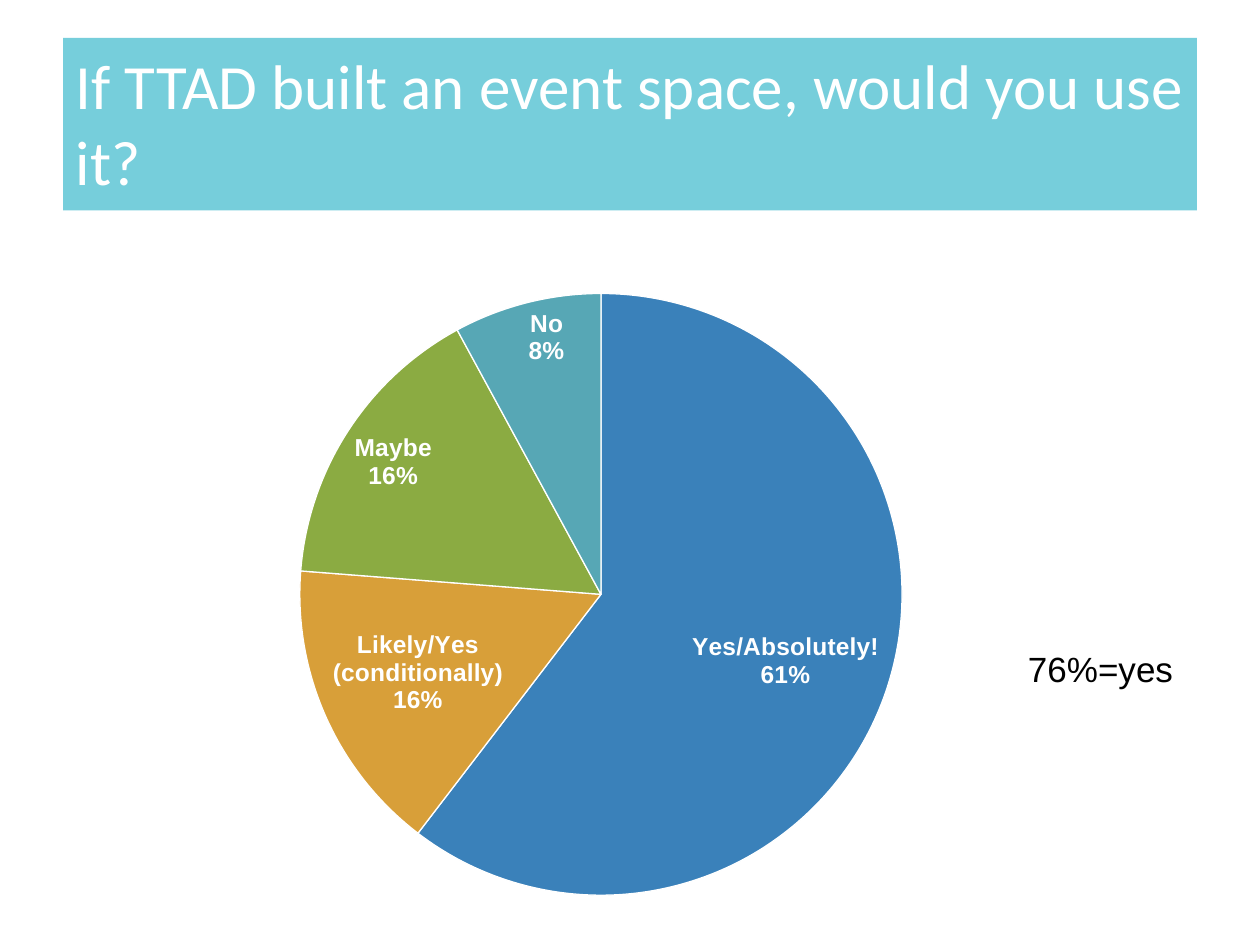
from lxml import etree
from pptx import Presentation
from pptx.chart.data import CategoryChartData
from pptx.dml.color import RGBColor
from pptx.enum.chart import XL_CHART_TYPE as ChartType, XL_LABEL_POSITION as LabelPos
from pptx.enum.text import MSO_ANCHOR as Anchor, MSO_AUTO_SIZE as AutoSize, PP_ALIGN as Align
from pptx.oxml.ns import qn
from pptx.util import Inches, Pt

COLORS = {"band": "76CEDB", "white": "FFFFFF", "black": "000000"}
ANSWERS = [
    ("Yes/Absolutely!", 61, "3A81BA"),
    ("Likely/Yes (conditionally)", 16, "D89F39"),
    ("Maybe", 16, "8BAB42"),
    ("No", 8, "57A7B5"),
]


def rgb(name):
    return RGBColor.from_string(COLORS.get(name, name))


def sub(parent, tag, val):
    etree.SubElement(parent, qn(tag)).set("val", str(val))


class SurveySlide:
    def __init__(self, prs):
        self.slide = prs.slides.add_slide(prs.slide_layouts[5])
        self.body_font = "Arial"
        self.title_font = "Calibri"

    def style(self, font, name, size, color, bold=False):
        font.name, font.size, font.bold = name, Pt(size), bold
        font.color.rgb = rgb(color)

    def place(self, sp, box):
        sp.left, sp.top, sp.width, sp.height = (Inches(v) for v in box)

    def title(self, text, box):
        sp = self.slide.shapes.title
        self.place(sp, box)
        sp.fill.solid()
        sp.fill.fore_color.rgb = rgb("band")
        tf = sp.text_frame
        tf.word_wrap, tf.auto_size = True, AutoSize.NONE
        tf.vertical_anchor = Anchor.BOTTOM
        tf.margin_left = tf.margin_right = tf.margin_top = tf.margin_bottom = Inches(0.1)
        p = tf.paragraphs[0]
        p.alignment = Align.LEFT
        r = p.add_run()
        r.text = text
        self.style(r.font, self.title_font, 36, "white")

    def note(self, text, box):
        sp = self.slide.shapes.add_textbox(*(Inches(v) for v in box))
        tf = sp.text_frame
        tf.word_wrap, tf.auto_size = True, AutoSize.SHAPE_TO_FIT_TEXT
        r = tf.paragraphs[0].add_run()
        r.text = text
        self.style(r.font, self.body_font, 20, "black")

    def pie(self, answers, box, plot_box):
        data = CategoryChartData()
        data.categories = [name for name, _, _ in answers]
        data.add_series("Series 1", [value for _, value, _ in answers])
        frame = self.slide.shapes.add_chart(
            ChartType.PIE, *(Inches(v) for v in box), data)
        chart = frame.chart
        chart.has_legend = chart.has_title = False
        self.style(chart.font, self.body_font, 10, "black")
        plot = chart.plots[0]
        plot.vary_by_categories = True
        for i, (_, _, color) in enumerate(answers):
            fmt = plot.series[0].points[i].format
            fmt.fill.solid()
            fmt.fill.fore_color.rgb = rgb(color)
            fmt.line.color.rgb = rgb("white")
            fmt.line.width = Pt(0.75)
        self.labels(plot.series[0].data_labels)
        self.plot_layout(chart, plot_box)

    def labels(self, labels):
        # The rounded shares total 101, so they are shown as values with a percent sign.
        labels.show_category_name = labels.show_value = True
        labels.number_format, labels.number_format_is_linked = '0"%"', False
        labels.position = LabelPos.INSIDE_END
        self.style(labels.font, self.body_font, 14, "white", bold=True)
        separator = etree.Element(qn("c:separator"))
        separator.text = "\n"
        labels._element.find(qn("c:showBubbleSize")).addnext(separator)

    def plot_layout(self, chart, plot_box):
        """Fix the inner plot area, given as fractions of the chart."""
        area = chart._chartSpace.find(".//" + qn("c:plotArea"))
        layout = area.find(qn("c:layout"))
        if layout is None:
            layout = etree.Element(qn("c:layout"))
            area.insert(0, layout)
        manual = etree.SubElement(layout, qn("c:manualLayout"))
        sub(manual, "c:layoutTarget", "inner")
        sub(manual, "c:xMode", "edge")
        sub(manual, "c:yMode", "edge")
        for key, value in zip("xywh", plot_box):
            sub(manual, f"c:{key}", value)


def main():
    prs = Presentation()
    prs.slide_width, prs.slide_height = Inches(10), Inches(7.5)
    s = SurveySlide(prs)
    s.title("If TTAD built an event space, would you use it?", (0.5, 0.3, 9, 1.37))
    s.note("76%=yes", (8.06, 5.09, 1.65, 0.44))
    s.pie(ANSWERS, (0.3, 1.97, 9.41, 5.14), (0.18, 0.07, 0.59, 0.93))
    prs.save("out.pptx")


if __name__ == "__main__":
    main()
